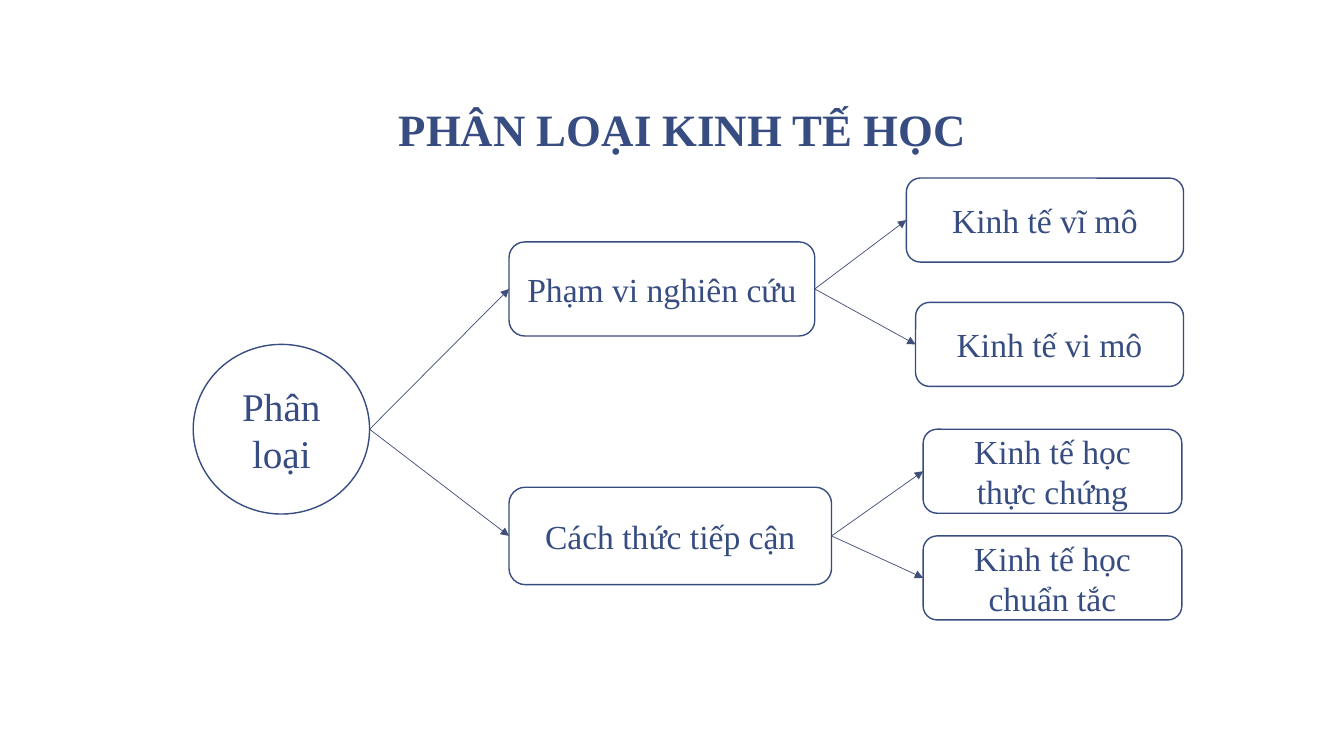
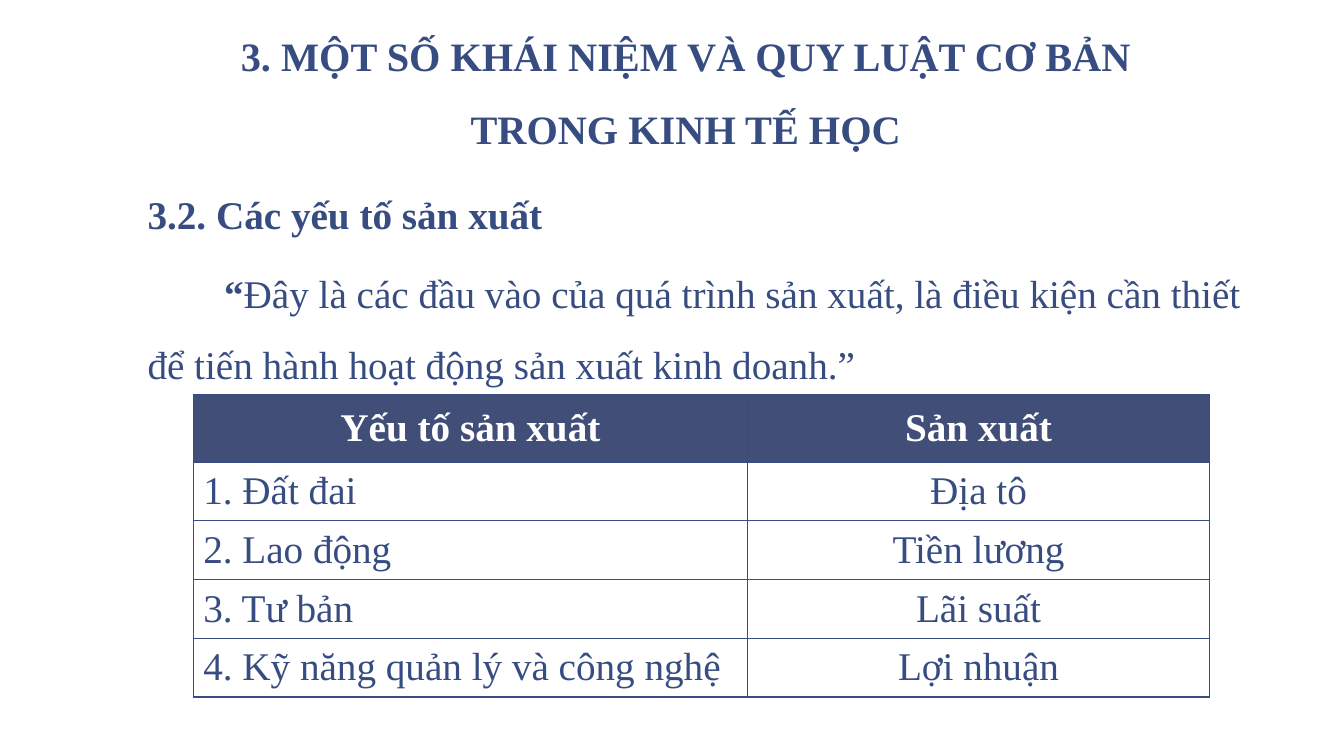
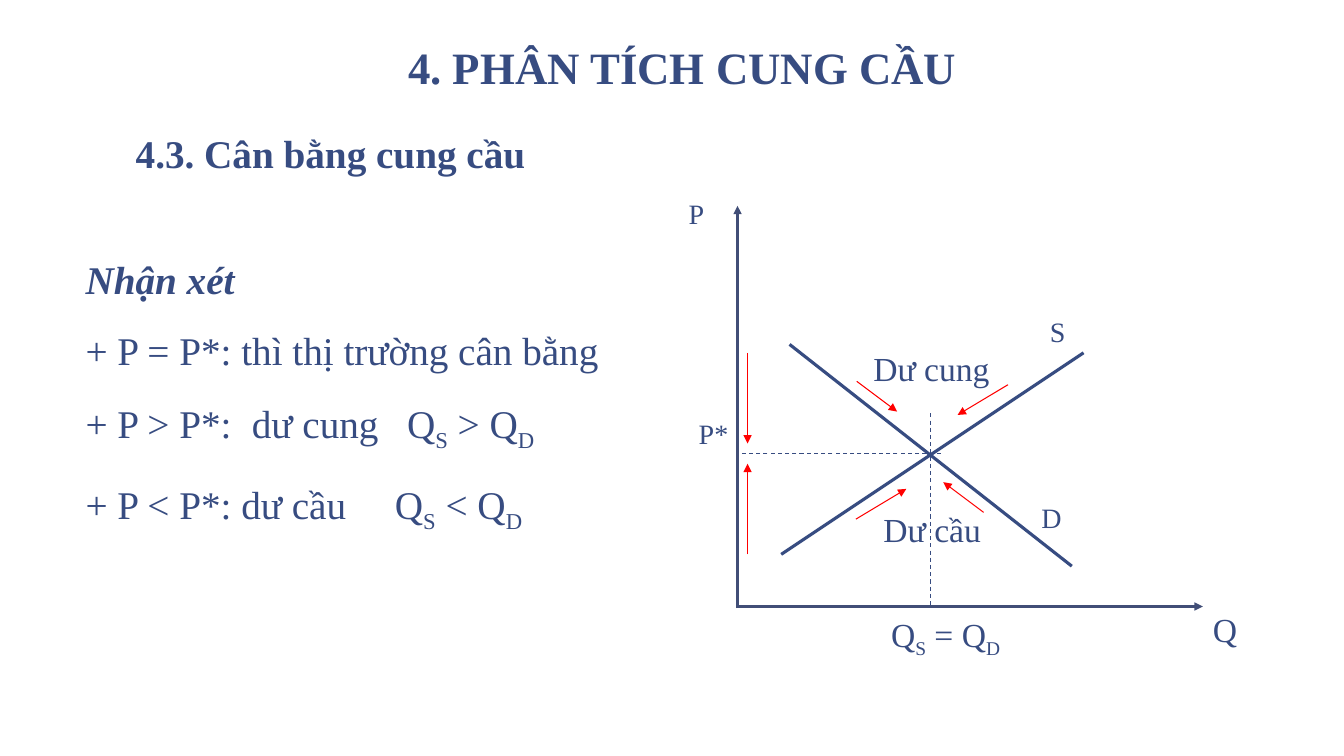
from dataclasses import dataclass

from lxml import etree
from pptx import Presentation
from pptx import util as u
from pptx.dml.color import RGBColor
from pptx.enum import dml, shapes, text
from pptx.oxml import ns


@dataclass(frozen=True)
class Theme:
    """Colours, font, type sizes and line widths shared by the slides."""
    navy: str = "374C81"
    slate: str = "414E77"
    white: str = "FFFFFF"
    red: str = "FF0000"
    font: str = "Times New Roman"
    title: float = 32
    long_title: float = 28.8
    body: float = 28
    node: float = 24
    label: float = 20
    hairline: float = 0.5
    thin: float = 0.75
    outline: float = 1
    axis: float = 2
    curve: float = 2.25


THEME = Theme()
COLUMNS, ROWS = 160, 90
CELL = u.Inches(7.5) / ROWS
CENTER, LEFT = text.PP_ALIGN.CENTER, text.PP_ALIGN.LEFT
MIDDLE, TOP = text.MSO_ANCHOR.MIDDLE, text.MSO_ANCHOR.TOP


def grid(*cells):
    """Turn grid cells into slide lengths."""
    return [u.Emu(round(cell * CELL)) for cell in cells]


def inside(region, box):
    """Shift a box or point from its region onto the slide grid."""
    return (region[0] + box[0], region[1] + box[1], *box[2:])


def rgb(color):
    """Return a colour object."""
    return RGBColor.from_string(color)


def style(font, size, color=THEME.navy, bold=False, italic=False):
    """Give a font the deck's typeface and the chosen look."""
    font.name, font.size = THEME.font, u.Pt(size)
    font.bold, font.italic = bold, italic
    font.color.rgb = rgb(color)


def write(frame, lines, size, align=LEFT, anchor=TOP, spacing=1, before=0,
          inset=(0.1, 0.05), **look):
    """Fill a frame with lines, each a string or a list of (words, mark)."""
    frame.word_wrap, frame.vertical_anchor = True, anchor
    frame.margin_left = frame.margin_right = u.Inches(inset[0])
    frame.margin_top = frame.margin_bottom = u.Inches(inset[1])
    for number, line in enumerate(lines):
        paragraph = frame.add_paragraph() if number else frame.paragraphs[0]
        paragraph.alignment, paragraph.line_spacing = align, spacing
        if number and before:
            paragraph.space_before = u.Pt(before)
        for words, mark in [(line, "")] if isinstance(line, str) else line:
            run = paragraph.add_run()
            run.text = words
            style(run.font, size, **look)
            if mark == "bold":
                run.font.bold = True
            elif mark == "sub":
                run.font._element.set("baseline", "-25000")
    return frame.paragraphs


def textbox(slide, box, lines, size, **options):
    """Place a text box and return its paragraphs."""
    frame = slide.shapes.add_textbox(*grid(*box)).text_frame
    return write(frame, lines, size, **options)


def line(slide, start, end, color, width, arrow=False, dashed=False):
    """Draw a straight line, with an arrowhead or dashes if asked."""
    stroke = slide.shapes.add_connector(
        shapes.MSO_CONNECTOR.STRAIGHT, *grid(*start, *end))
    stroke.line.color.rgb, stroke.line.width = rgb(color), u.Pt(width)
    if dashed:
        stroke.line.dash_style = dml.MSO_LINE.DASH
    if arrow:
        etree.SubElement(stroke.line._get_or_add_ln(), ns.qn("a:tailEnd"), type="triangle")
    etree.SubElement(stroke._element.spPr, ns.qn("a:effectLst"))


def title(slide, box, lines, size=THEME.title, spacing=0.85):
    """Place the bold centred heading at the bottom of its box."""
    textbox(slide, box, lines, size, align=CENTER, anchor=text.MSO_ANCHOR.BOTTOM,
            spacing=spacing, inset=(0.13, 0.07), bold=True)


def node(slide, box, lines, size=THEME.node, outline=shapes.MSO_SHAPE.ROUNDED_RECTANGLE):
    """Draw one outlined node of the tree."""
    shape = slide.shapes.add_shape(outline, *grid(*box))
    shape.shadow.inherit = False
    shape.fill.solid()
    shape.fill.fore_color.rgb = rgb(THEME.white)
    shape.line.color.rgb, shape.line.width = rgb(THEME.navy), u.Pt(THEME.outline)
    write(shape.text_frame, lines, size, align=CENTER, anchor=MIDDLE)


def branch(slide, parent, child):
    """Join the right side of a parent box to the left side of a child box."""
    line(slide, (parent[0] + parent[2], parent[1] + parent[3] / 2),
         (child[0], child[1] + child[3] / 2), THEME.slate, THEME.hairline, arrow=True)


def classification_tree(slide, region):
    """Draw the tree of the branches of economics."""
    root = inside(region, (0, 20, 21, 20.2))
    node(slide, root, ["Phân loại"], THEME.body, shapes.MSO_SHAPE.OVAL)
    branches = [
        ("Phạm vi nghiên cứu", (37.6, 7.8, 36.4, 11.2), [
            (["Kinh tế vĩ mô"], (84.9, 0.2, 33, 10)),
            (["Kinh tế vi mô"], (86, 15, 31.9, 10))]),
        ("Cách thức tiếp cận", (37.6, 37, 38.4, 11.6), [
            (["Kinh tế học", "thực chứng"], (86.9, 30.1, 30.8, 10)),
            (["Kinh tế học chuẩn tắc"], (86.9, 42.8, 30.8, 10))]),
    ]
    for criterion, place, kinds in branches:
        criterion_box = inside(region, place)
        branch(slide, root, criterion_box)
        node(slide, criterion_box, [criterion])
        for kind, spot in kinds:
            kind_box = inside(region, spot)
            branch(slide, criterion_box, kind_box)
            node(slide, kind_box, kind)


def definition(slide, box):
    """Place the section heading and the justified definition."""
    inset = (0.13, 0.07)
    heading, quote = textbox(slide, box, [
        [("3.2. Các yếu tố sản xuất", "bold")],
        [("“", "bold"), ("Đây là các đầu vào của quá trình sản xuất, là điều kiện cần thiết "
                         "để tiến hành hoạt động sản xuất kinh doanh.”", "")],
    ], THEME.body, spacing=1.5, before=6, inset=inset)
    quote.alignment = text.PP_ALIGN.JUSTIFY
    quote._p.get_or_add_pPr().set("indent", str(u.Inches(0.76)))


def border(cell):
    """Outline a table cell on its four sides."""
    for side in ("lnL", "lnR", "lnT", "lnB"):
        edge = etree.SubElement(cell._tc.get_or_add_tcPr(), ns.qn(f"a:{side}"),
                                w=str(u.Pt(THEME.outline)))
        paint = etree.SubElement(edge, ns.qn("a:solidFill"))
        etree.SubElement(paint, ns.qn("a:srgbClr"), val=THEME.navy)


def factor_table(slide, box):
    """Build the table of production factors and their returns."""
    factors = [
        ("Yếu tố sản xuất", "Sản xuất"),
        ("1. Đất đai", "Địa tô"),
        ("2. Lao động", "Tiền lương"),
        ("3. Tư bản", "Lãi suất"),
        ("4. Kỹ năng quản lý và công nghệ", "Lợi nhuận"),
    ]
    table = slide.shapes.add_table(len(factors), 2, *grid(*box)).table
    for column, width in zip(table.columns, grid(66, 55)):
        column.width = width
    for row, height in zip(table.rows, grid(8, 7, 7, 7, 7)):
        row.height = height
    for row, entries in enumerate(factors):
        header = row == 0
        for column, entry in enumerate(entries):
            cell = table.cell(row, column)
            border(cell)
            cell.fill.solid()
            cell.fill.fore_color.rgb = rgb(THEME.slate if header else THEME.white)
            cell.vertical_anchor = MIDDLE
            cell.text = entry
            paragraph = cell.text_frame.paragraphs[0]
            paragraph.alignment = CENTER if header or column else LEFT
            style(paragraph.runs[0].font, THEME.body,
                  THEME.white if header else THEME.navy, bold=header)


def quantities(relation, lead=""):
    """Return the runs that compare supplied and demanded quantities."""
    return [(f"{lead}Q", ""), ("S", "sub"), (f" {relation} Q", ""), ("D", "sub")]


def remarks(slide, box):
    """List the remarks on the market price."""
    remark, *cases = textbox(slide, box, [
        "Nhận xét",
        "+ P = P*: thì thị trường cân bằng",
        quantities(">", "+ P > P*:\tdư cung\t"),
        quantities("<", "+ P < P*: dư cầu\t"),
    ], THEME.body, spacing=1.5)
    remark.runs[0].font.bold = remark.runs[0].font.italic = True
    for case, stops in zip(cases[1:], [(1.65, 3.19), (3.07,)]):
        tabs = etree.SubElement(case._p.get_or_add_pPr(), ns.qn("a:tabLst"))
        for stop in stops:
            etree.SubElement(tabs, ns.qn("a:tab"), pos=str(u.Inches(stop)), algn="l")


def market_graph(slide, region):
    """Draw supply and demand curves around their equilibrium."""
    curve = dict(color=THEME.navy, width=THEME.curve)
    guide = dict(color=THEME.navy, width=THEME.thin, dashed=True)
    push = dict(color=THEME.red, width=THEME.thin, arrow=True)
    axis = dict(color=THEME.slate, width=THEME.axis, arrow=True)
    for start, end, look in [
        ((5, 42), (41, 18), curve),
        ((6, 17), (39.6, 43.4), curve),
        ((24, 30), (0, 30), guide),
        ((22.8, 25.2), (22.8, 48), guide),
        ((13.9, 37.8), (19.9, 34.2), push),
        ((29.1, 37), (24.3, 33.4), push),
        ((14, 21.4), (18.8, 25), push),
        ((32, 21.8), (26, 25.4), push),
        ((1, 18), (1, 28.8), push),
        ((1, 42), (1, 31.2), push),
        ((-0.2, 48.4), (-0.2, 0.5), axis),
        ((0, 48.2), (55.2, 48.2), axis),
    ]:
        line(slide, inside(region, start), inside(region, end), **look)
    for label, spot, size in [
        ("P", (-7.2, -1.2, 8, 6), THEME.label),
        ("P*", (-6, 25, 8, 6), THEME.label),
        ("S", (35.8, 12.8, 9, 6), THEME.label),
        ("D", (34.8, 35, 9, 6), THEME.label),
        ("Dư cung", (14.8, 16.8, 20, 7), THEME.node),
        ("Dư cầu", (16, 36, 19, 7), THEME.node),
        (quantities("="), (16.9, 48.5, 19, 7), THEME.node),
        ("Q", (55.2, 47.9, 6, 7), THEME.node),
    ]:
        textbox(slide, inside(region, spot), [label], size)


def classification_slide(slide):
    """Compose the slide on the branches of economics."""
    title(slide, (14.6, 1, 133.3, 18.4), ["PHÂN LOẠI KINH TẾ HỌC"])
    classification_tree(slide, (23, 21))


def factors_slide(slide):
    """Compose the slide on the factors of production."""
    title(slide, (15, 4, 133.3, 15),
          ["3. MỘT SỐ KHÁI NIỆM VÀ QUY LUẬT CƠ BẢN", "TRONG KINH TẾ HỌC"],
          THEME.long_title, 1.5)
    definition(slide, (16, 19, 133.3, 27))
    factor_table(slide, (23, 47, 121, 36))


def equilibrium_slide(slide):
    """Compose the slide on market equilibrium."""
    title(slide, (14.6, 1, 133.3, 11), ["4. PHÂN TÍCH CUNG CẦU"])
    textbox(slide, (14.6, 15, 133.3, 8), ["4.3. Cân bằng cung cầu"], THEME.body,
            spacing=0.95, inset=(0.13, 0.07), bold=True)
    remarks(slide, (9, 27, 70, 42.6))
    market_graph(slide, (88, 24))


def main():
    """Build and save the deck."""
    deck = Presentation()
    deck.slide_width, deck.slide_height = grid(COLUMNS, ROWS)
    for compose in (classification_slide, factors_slide, equilibrium_slide):
        slide = deck.slides.add_slide(deck.slide_layouts[6])
        slide.background.fill.solid()
        slide.background.fill.fore_color.rgb = rgb(THEME.white)
        compose(slide)
    deck.save("out.pptx")


if __name__ == "__main__":
    main()
